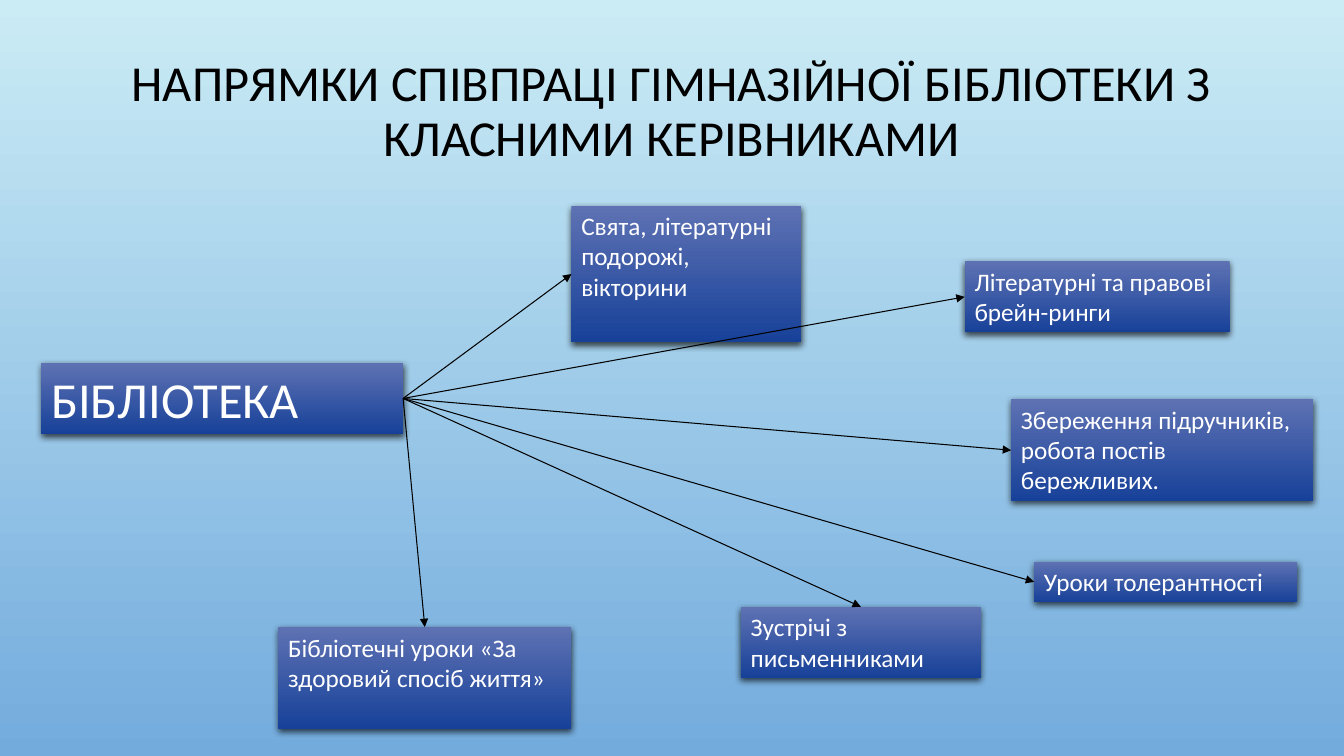
from dataclasses import dataclass

from lxml import etree
from pptx import Presentation
from pptx.dml.color import RGBColor
from pptx.dml.fill import FillFormat
from pptx.enum.shapes import MSO_CONNECTOR as Connector, MSO_SHAPE as Shape
from pptx.enum.text import MSO_ANCHOR as Anchor, MSO_AUTO_SIZE as AutoSize, PP_ALIGN as Align
from pptx.oxml import parse_xml
from pptx.oxml.ns import nsdecls, qn
from pptx.shapes.autoshape import Shape as AutoShape
from pptx.slide import Slide
from pptx.text.text import TextFrame
from pptx.util import Cm, Pt


@dataclass(frozen=True)
class Theme:
    font: str = "Calibri"
    large: int = 36
    normal: int = 18
    dark: str = "000000"
    light: str = "FFFFFF"
    background: tuple[str, str] = ("CBECF5", "73ABDD")
    box: tuple[str, str] = ("5E72B3", "174199")


@dataclass(frozen=True)
class Box:
    text: str
    left: float
    top: float
    width: float
    height: float
    entry_side: int = 1


THEME = Theme()
TOP, LEFT, RIGHT = 0, 1, 3

TITLE = Box("НАПРЯМКИ СПІВПРАЦІ ГІМНАЗІЙНОЇ БІБЛІОТЕКИ З КЛАСНИМИ КЕРІВНИКАМИ",
            2.54, 0.61, 28.78, 4.45)
LIBRARY = Box("БІБЛІОТЕКА", 1.04, 9.14, 9.12, 1.8)
DIRECTIONS = [
    Box("Свята, літературні подорожі, вікторини", 14.4, 5.18, 5.79, 3.45, LEFT),
    Box("Літературні та правові брейн-ринги", 24.31, 6.58, 6.68, 1.8, LEFT),
    Box("Збереження підручників, робота постів бережливих.", 25.48, 10.06, 7.62, 2.57, LEFT),
    Box("Уроки толерантності", 26.06, 14.15, 6.63, 1.02, LEFT),
    Box("Зустрічі з письменниками", 18.67, 15.29, 6.05, 1.8, TOP),
    Box("Бібліотечні уроки «За здоровий спосіб життя»", 7.01, 15.8, 7.39, 2.57, TOP),
]


def apply_format(target: object, values: dict[str, object]) -> None:
    for name, value in values.items():
        setattr(target, name, value)


def fill_downwards(fill: FillFormat, colors: tuple[str, str]) -> None:
    fill.gradient()
    fill.gradient_angle = 270
    for stop, color in zip(fill.gradient_stops, colors):
        stop.color.rgb = RGBColor.from_string(color)


def write_text(frame: TextFrame, text: str, size: int, color: str,
               align: Align, anchor: Anchor) -> None:
    apply_format(frame, {"word_wrap": True, "auto_size": AutoSize.NONE,
                         "vertical_anchor": anchor})
    paragraph = frame.paragraphs[0]
    paragraph.alignment = align
    run = paragraph.add_run()
    run.text = text
    apply_format(run.font, {"name": THEME.font, "size": Pt(size)})
    run.font.color.rgb = RGBColor.from_string(color)


def add_title(slide: Slide, title: Box) -> None:
    placeholder = slide.shapes.title
    apply_format(placeholder, {"left": Cm(title.left), "top": Cm(title.top),
                               "width": Cm(title.width), "height": Cm(title.height)})
    write_text(placeholder.text_frame, title.text, THEME.large, THEME.dark,
               Align.CENTER, Anchor.MIDDLE)
    placeholder.text_frame.paragraphs[0].line_spacing = 0.9


def add_box(slide: Slide, box: Box, size: int) -> AutoShape:
    shape = slide.shapes.add_shape(Shape.RECTANGLE, Cm(box.left), Cm(box.top),
                                   Cm(box.width), Cm(box.height))
    fill_downwards(shape.fill, THEME.box)
    shape.line.fill.background()
    # Soft shadow below the box
    shape.shadow.inherit = False
    effects = shape.element.spPr.find(qn("a:effectLst"))
    effects.append(parse_xml(
        f'<a:outerShdw {nsdecls("a")} blurRad="{Pt(5)}" dist="{Pt(2)}" dir="5400000" '
        f'algn="ctr" rotWithShape="0"><a:srgbClr val="{THEME.dark}">'
        '<a:alpha val="69000"/></a:srgbClr></a:outerShdw>'))
    write_text(shape.text_frame, box.text, size, THEME.light, Align.LEFT, Anchor.TOP)
    return shape


def add_arrow(slide: Slide, start: AutoShape, end: AutoShape, entry_side: int) -> None:
    arrow = slide.shapes.add_connector(Connector.STRAIGHT, 0, 0, 0, 0)
    arrow.begin_connect(start, RIGHT)
    arrow.end_connect(end, entry_side)
    arrow.line.width = Pt(0.75)
    arrow.line.color.rgb = RGBColor.from_string(THEME.dark)
    properties = arrow.element.spPr
    etree.SubElement(properties.find(qn("a:ln")), qn("a:tailEnd"), type="triangle")
    etree.SubElement(properties, qn("a:effectLst"))


def main() -> None:
    presentation = Presentation()
    apply_format(presentation, {"slide_width": Cm(33.87), "slide_height": Cm(19.05)})
    slide = presentation.slides.add_slide(presentation.slide_layouts[5])
    fill_downwards(slide.background.fill, THEME.background)
    add_title(slide, TITLE)

    # Library and its directions of cooperation
    library = add_box(slide, LIBRARY, THEME.large)
    targets = [add_box(slide, box, THEME.normal) for box in DIRECTIONS]

    # Arrows lie above all boxes
    for box, target in zip(DIRECTIONS, targets):
        add_arrow(slide, library, target, box.entry_side)

    presentation.save("out.pptx")


if __name__ == "__main__":
    main()
